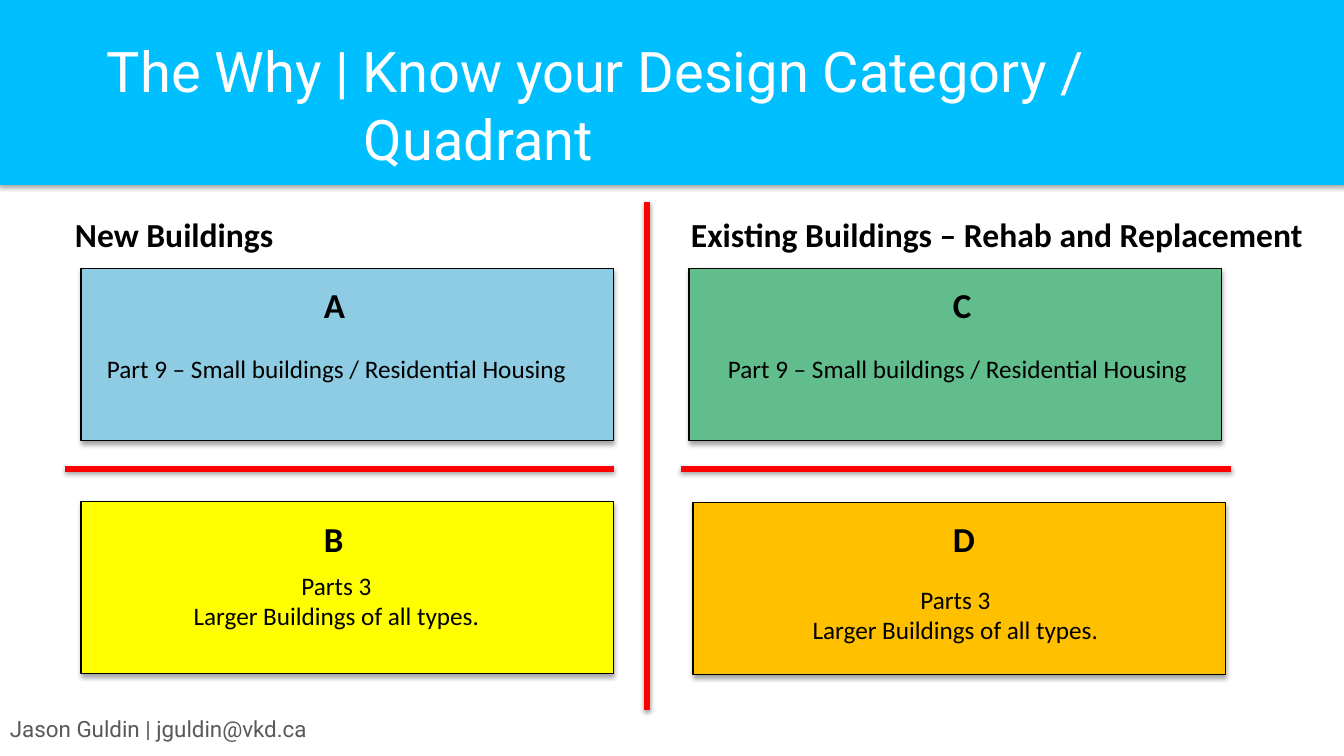
"""Build the design category quadrant slide."""
from lxml.etree import SubElement
from pptx import Presentation
from pptx.dml.color import RGBColor
from pptx.enum.shapes import MSO_CONNECTOR, MSO_SHAPE
from pptx.enum.text import PP_ALIGN
from pptx.oxml.ns import qn
from pptx.util import Emu, Pt

SLIDE = (1344, 756)
SCALE = 12192000 / SLIDE[0]
HEADER = (-2, -1, 1347, 186)
TITLE = ("The Why | Know your Design Category / Quadrant", (97, 27, 1186, 97))
TITLE_INDENT = 257
FOOTER = ("Jason Guldin | jguldin@vkd.ca", (0, 710, 360, 37))
CAPTIONS = [
    ("New Buildings", (65, 209, 221, 51)),
    ("Existing Buildings – Rehab and Replacement", (681, 209, 638, 51)),
]
HOUSING = ["Part 9 – Small buildings / Residential Housing"]
LARGER = ["Parts 3", "Larger Buildings of all types."]
CARD_SIZE = (533, 172)
LETTER_SIZE = (49, 52)
BODY_WIDTH = 549
LINE_HEIGHT = 31
QUADRANTS = [
    ("A", "8ECCE3", (81, 269), (314, 279), HOUSING, (62, 348)),
    ("B", "FFFF00", (81, 502), (314, 513), LARGER, (62, 565)),
    ("C", "62BD8C", (689, 269), (943, 279), HOUSING, (683, 348)),
    ("D", "FFC000", (693, 503), (943, 513), LARGER, (681, 579)),
]
DIVIDERS = [
    ((647, 202), (647, 710), 4.75),
    ((65, 469), (614, 469), 4),
    ((681, 469), (1231, 469), 4),
]


def px(length):
    return Emu(round(length * SCALE))


def colour(value):
    return RGBColor.from_string(value)


def add_shadow(shape, distance, opacity):
    effects = SubElement(shape._element.spPr, qn("a:effectLst"))
    shadow = SubElement(effects, qn("a:outerShdw"), blurRad="40000", dist=str(distance),
                        dir="5400000", rotWithShape="0")
    black = SubElement(shadow, qn("a:srgbClr"), val="000000")
    SubElement(black, qn("a:alpha"), val=str(opacity * 1000))


def add_panel(page, frame, fill, outlined=True):
    panel = page.shapes.add_shape(MSO_SHAPE.RECTANGLE, *map(px, frame))
    panel.fill.solid()
    panel.fill.fore_color.rgb = colour(fill)
    if outlined:
        panel.line.color.rgb = colour("000000")
        panel.line.width = Pt(0.75)
    else:
        panel.line.fill.background()
    add_shadow(panel, 23000, 35)


def add_text(page, lines, frame, size, font="Calibri", ink="000000",
             bold=False, align=PP_ALIGN.LEFT, wrap=True):
    box = page.shapes.add_textbox(*map(px, frame))
    box.text_frame.word_wrap = wrap
    box.text_frame.text = "\n".join(lines)
    for para in box.text_frame.paragraphs:
        para.alignment = align
        for span in para.runs:
            span.font.name = font
            span.font.size = Pt(size)
            span.font.bold = bold
            span.font.color.rgb = colour(ink)
    return box


def add_divider(page, start, end, width):
    divider = page.shapes.add_connector(MSO_CONNECTOR.STRAIGHT, *map(px, start + end))
    divider.line.color.rgb = colour("FF0000")
    divider.line.width = Pt(width)
    add_shadow(divider, 20000, 38)


def main():
    deck = Presentation()
    deck.slide_width, deck.slide_height = map(px, SLIDE)
    page = deck.slides.add_slide(deck.slide_layouts[6])

    add_panel(page, HEADER, "00BFFF", outlined=False)
    text, frame = TITLE
    title = add_text(page, [text], frame, 40, "Roboto", "FFFFFF")
    title.text_frame.margin_top = px(10)
    properties = title.text_frame.paragraphs[0]._p.get_or_add_pPr()
    properties.set("marL", str(px(TITLE_INDENT)))
    properties.set("indent", str(-px(TITLE_INDENT)))

    for letter, fill, card, letter_spot, body, body_spot in QUADRANTS:
        add_panel(page, card + CARD_SIZE, fill)
        add_text(page, [letter], letter_spot + LETTER_SIZE, 25, bold=True)
        body_size = (BODY_WIDTH, 10 + LINE_HEIGHT * len(body))
        add_text(page, body, body_spot + body_size, 18, align=PP_ALIGN.CENTER)

    for caption, frame in CAPTIONS:
        add_text(page, [caption], frame, 24, bold=True, wrap=False)
    for divider in DIVIDERS:
        add_divider(page, *divider)

    text, frame = FOOTER
    add_text(page, [text], frame, 16, "Roboto", "595959")
    deck.save("out.pptx")


if __name__ == "__main__":
    main()
